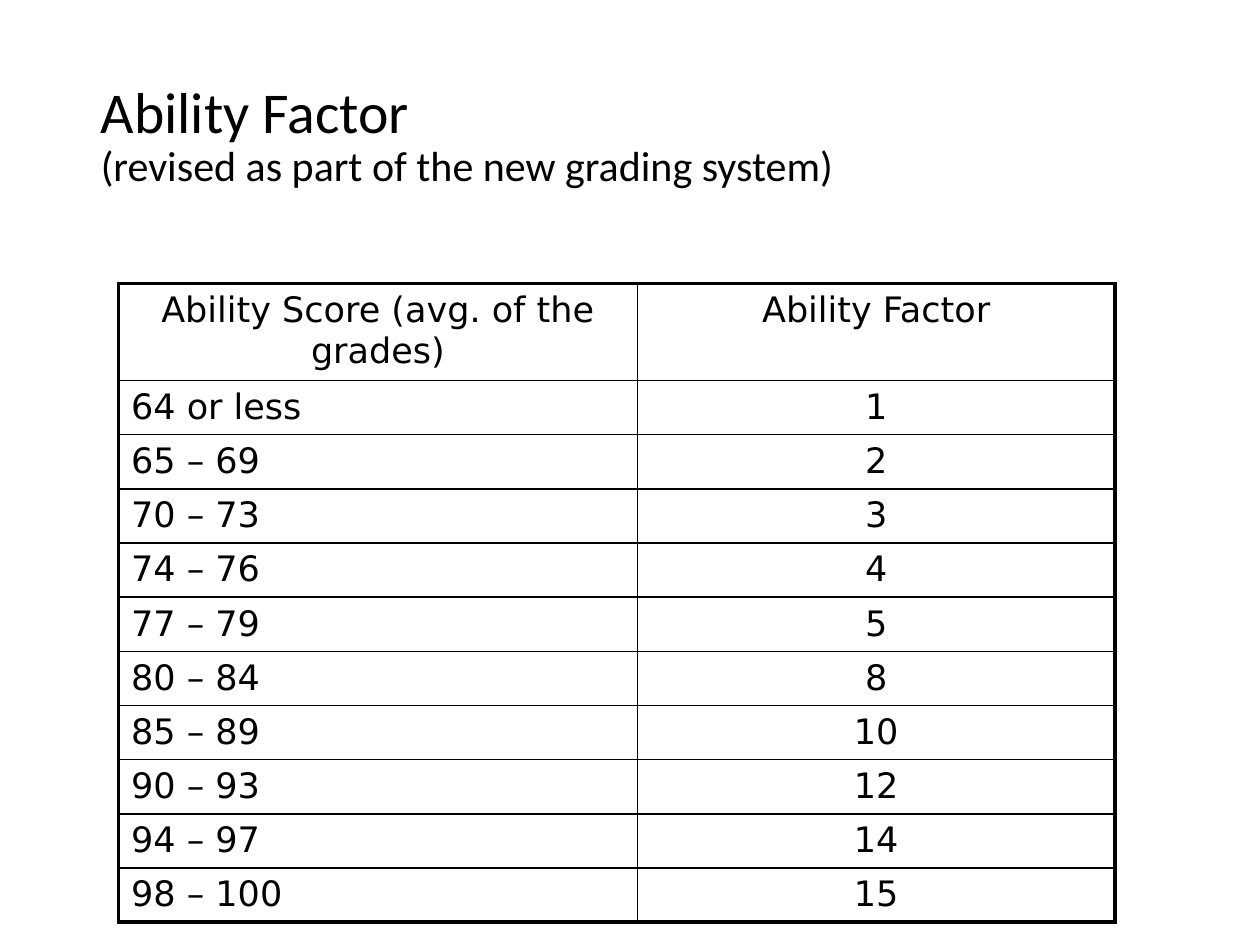
from lxml.etree import SubElement
from pptx import Presentation
from pptx.dml.color import RGBColor
from pptx.enum.text import MSO_ANCHOR, MSO_AUTO_SIZE, PP_ALIGN
from pptx.oxml.ns import qn
from pptx.util import Inches, Pt

COLORS = {"text": "000000", "border": "000000"}
TITLE_LINES = [("Ability Factor", 33),
               ("(revised as part of the new grading system)", 24)]
ABILITY_ROWS = [
    ("Ability Score (avg. of the grades)", "Ability Factor"),
    ("64 or less", "1"),
    ("65 – 69", "2"),
    ("70 – 73", "3"),
    ("74 – 76", "4"),
    ("77 – 79", "5"),
    ("80 – 84", "8"),
    ("85 – 89", "10"),
    ("90 – 93", "12"),
    ("94 – 97", "14"),
    ("98 – 100", "15"),
]
COLUMN_WIDTHS = (4.12, 3.79)
HEADER_HEIGHT, ROW_HEIGHT = 0.77, 0.43
OUTER_LINE, INNER_LINE = 2.25, 1


class SlideBuilder:
    title_font = "Calibri"
    table_font = "DejaVu Sans"
    table_size = 20

    def __init__(self, presentation):
        self.width = presentation.slide_width
        self.height = presentation.slide_height
        self.slide = presentation.slides.add_slide(presentation.slide_layouts[5])

    def place(self, left, top, width, height):
        """Turn shares of the slide into lengths."""
        return (int(left * self.width), int(top * self.height),
                int(width * self.width), int(height * self.height))

    def style_run(self, run, font, size):
        run.font.name = font
        run.font.size = Pt(size)
        run.font.bold = False
        run.font.color.rgb = RGBColor.from_string(COLORS["text"])

    def title(self, lines, left, top, width, height):
        shape = self.slide.shapes.title
        shape.left, shape.top, shape.width, shape.height = self.place(
            left, top, width, height)
        frame = shape.text_frame
        frame.text = "\v".join(text for text, _ in lines)
        frame.vertical_anchor = MSO_ANCHOR.MIDDLE
        frame.word_wrap = True
        frame.auto_size = MSO_AUTO_SIZE.NONE
        paragraph = frame.paragraphs[0]
        paragraph.alignment = PP_ALIGN.LEFT
        paragraph.line_spacing = 0.9
        for run, (_, size) in zip(paragraph.runs, lines):
            self.style_run(run, self.title_font, size)

    def table(self, rows, left, top):
        heights = [HEADER_HEIGHT] + [ROW_HEIGHT] * (len(rows) - 1)
        x, y, _, _ = self.place(left, top, 0, 0)
        table = self.slide.shapes.add_table(
            len(rows), len(COLUMN_WIDTHS), x, y,
            Inches(sum(COLUMN_WIDTHS)), Inches(sum(heights))).table
        table.first_row = table.horz_banding = False
        for column, width in zip(table.columns, COLUMN_WIDTHS):
            column.width = Inches(width)
        last_row, last_column = len(rows) - 1, len(COLUMN_WIDTHS) - 1
        for r, (texts, height) in enumerate(zip(rows, heights)):
            table.rows[r].height = Inches(height)
            for c, text in enumerate(texts):
                cell = table.cell(r, c)
                centered = r == 0 or c > 0
                self.cell_text(cell, text,
                               PP_ALIGN.CENTER if centered else PP_ALIGN.LEFT)
                self.cell_borders(cell, {"L": c == 0, "R": c == last_column,
                                         "T": r == 0, "B": r == last_row})
                cell.fill.background()

    def cell_text(self, cell, text, alignment):
        cell.text_frame.text = text
        paragraph = cell.text_frame.paragraphs[0]
        paragraph.alignment = alignment
        space = SubElement(paragraph._p.get_or_add_pPr(), qn("a:spcBef"))
        SubElement(space, qn("a:spcPct"), val="20000")
        self.style_run(paragraph.runs[0], self.table_font, self.table_size)

    def cell_borders(self, cell, outer_sides):
        """Draw each side, thicker where it lies on the table's edge."""
        properties = cell._tc.get_or_add_tcPr()
        for side, is_outer in outer_sides.items():
            width = Pt(OUTER_LINE if is_outer else INNER_LINE)
            line = SubElement(properties, qn(f"a:ln{side}"), w=str(width))
            fill = SubElement(line, qn("a:solidFill"))
            SubElement(fill, qn("a:srgbClr"), val=COLORS["border"])


def main():
    presentation = Presentation()
    presentation.slide_width = Inches(10)
    presentation.slide_height = Inches(7.5)
    builder = SlideBuilder(presentation)
    builder.title(TITLE_LINES, 0.07, 0.05, 0.86, 0.19)
    builder.table(ABILITY_ROWS, 0.094, 0.3)
    presentation.save("out.pptx")


if __name__ == "__main__":
    main()
